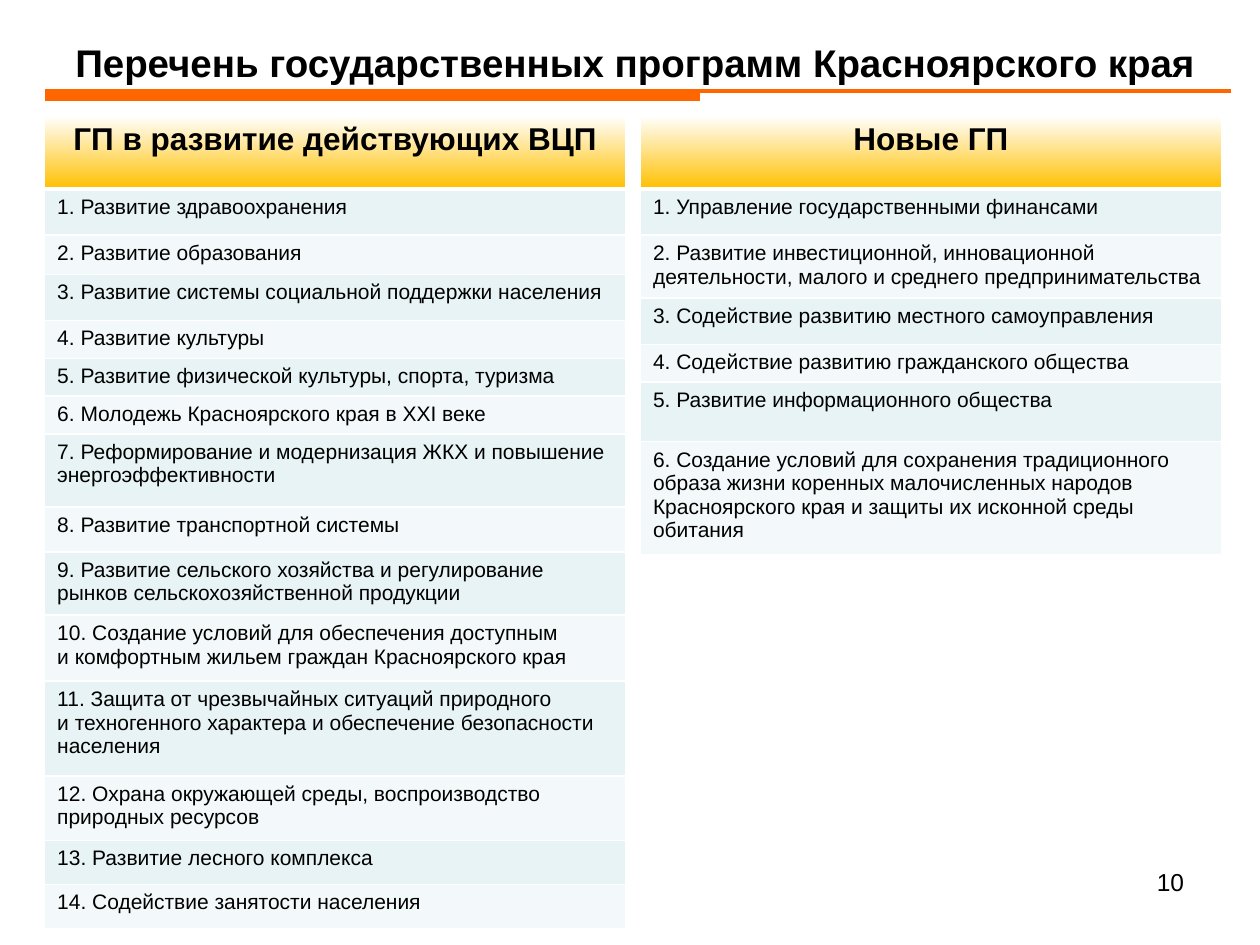
from lxml.etree import SubElement
from pptx import Presentation
from pptx.dml.color import RGBColor
from pptx.enum.text import MSO_ANCHOR, PP_ALIGN
from pptx.oxml import parse_xml
from pptx.oxml.ns import nsdecls, qn
from pptx.util import Cm, Pt

COLORS = {
    "text": "000000",
    "rule": "FF6600",
    "gold": "FFC000",
    "white": "FFFFFF",
    "odd": "E7F3F4",
    "even": "F3F9FA",
}
HEAD = 1.48
WIDTH = 11.71

CURRENT = [
    ("Развитие здравоохранения", 0.93),
    ("Развитие образования", 0.79),
    ("Развитие системы социальной поддержки населения", 0.93),
    ("Развитие культуры", 0.73),
    ("Развитие физической культуры, спорта, туризма", 0.73),
    ("Молодежь Красноярского края в XXI веке", 0.74),
    ("Реформирование и модернизация ЖКХ и повышение энергоэффективности", 1.47),
    ("Развитие транспортной системы", 0.91),
    ("Развитие сельского хозяйства и регулирование "
     "рынков сельскохозяйственной продукции", 1.2),
    ("Создание условий для обеспечения доступным \v"
     "и комфортным жильем граждан Красноярского края", 1.33),
    ("Защита от чрезвычайных ситуаций природного \v"
     "и техногенного характера и обеспечение безопасности населения", 1.91),
    ("Охрана окружающей среды, воспроизводство природных ресурсов", 1.3),
    ("Развитие лесного комплекса", 0.89),
    ("Содействие занятости населения", 0.89),
]
NEW = [
    ("Управление государственными финансами", 0.93),
    ("Развитие инвестиционной, инновационной деятельности, "
     "малого и среднего предпринимательства", 1.2),
    ("Содействие развитию местного самоуправления", 0.93),
    ("Содействие развитию гражданского общества", 0.73),
    ("Развитие информационного общества", 1.2),
    ("Создание условий для сохранения традиционного образа жизни "
     "коренных малочисленных народов Красноярского края "
     "и защиты их исконной среды обитания", 2.14),
]


def color(name):
    return RGBColor.from_string(COLORS[name])


def write(frame, text, size, bold=False, align=PP_ALIGN.LEFT):
    frame.text = text
    frame.word_wrap = True
    for par in frame.paragraphs:
        par.alignment = align
        for run in par.runs:
            run.font.name = "Arial"
            run.font.size = Pt(size)
            run.font.bold = bold
            run.font.color.rgb = color("text")


def add_text(slide, left, top, width, height, text, size, **style):
    box = slide.shapes.add_textbox(Cm(left), Cm(top), Cm(width), Cm(height))
    write(box.text_frame, text, size, **style)
    return box


def add_rule(slide, left, right, top, weight):
    line = slide.shapes.add_connector(1, Cm(left), Cm(top), Cm(right), Cm(top))
    line.line.color.rgb = color("rule")
    line.line.width = Pt(weight)
    SubElement(line._element.spPr, qn("a:effectLst"))


def add_border(cell, base):
    props = cell._tc.get_or_add_tcPr()
    for spot, side in enumerate("LRTB"):
        width = Pt(base if side == "B" else 1)
        props.insert(spot, parse_xml(
            f'<a:ln{side} {nsdecls("a")} w="{width}"><a:solidFill>'
            f'<a:srgbClr val="{COLORS["white"]}"/></a:solidFill></a:ln{side}>'))


def fill_head(cell):
    cell.fill.gradient()
    cell.fill.gradient_angle = 90
    for stop, name, place in zip(cell.fill.gradient_stops, ("gold", "white"), (0, 1)):
        stop.color.rgb = color(name)
        stop.position = place


def add_list(slide, left, title, items):
    heights = [HEAD] + [height for _, height in items]
    table = slide.shapes.add_table(
        len(heights), 1, Cm(left), Cm(2.33), Cm(WIDTH), Cm(sum(heights))).table
    for row, height in zip(table.rows, heights):
        row.height = Cm(height)
    head = table.cell(0, 0)
    write(head.text_frame, title, 18, bold=True, align=PP_ALIGN.CENTER)
    fill_head(head)
    add_border(head, 3)
    for num, (text, _) in enumerate(items, 1):
        cell = table.cell(num, 0)
        write(cell.text_frame, f"{num}. {text}", 12)
        cell.fill.solid()
        cell.fill.fore_color.rgb = color("odd" if num % 2 else "even")
        add_border(cell, 1)


def main():
    deck = Presentation()
    deck.slide_width, deck.slide_height = Cm(25.4), Cm(19.05)
    slide = deck.slides.add_slide(deck.slide_layouts[6])
    add_text(slide, 18.2, 17.35, 5.92, 1.32, "10", 14, align=PP_ALIGN.RIGHT)
    add_list(slide, 0.9, "ГП в развитие действующих ВЦП", CURRENT)
    add_list(slide, 12.91, "Новые ГП", NEW)
    title = add_text(slide, 1.27, 0.56, 23.62, 1.37,
                     "Перечень государственных программ Красноярского края",
                     22, bold=True)
    title.text_frame.vertical_anchor = MSO_ANCHOR.MIDDLE
    add_rule(slide, 0.91, 14.12, 1.93, 6)
    add_rule(slide, 0.9, 24.82, 1.84, 2.25)
    deck.save("out.pptx")


if __name__ == "__main__":
    main()
